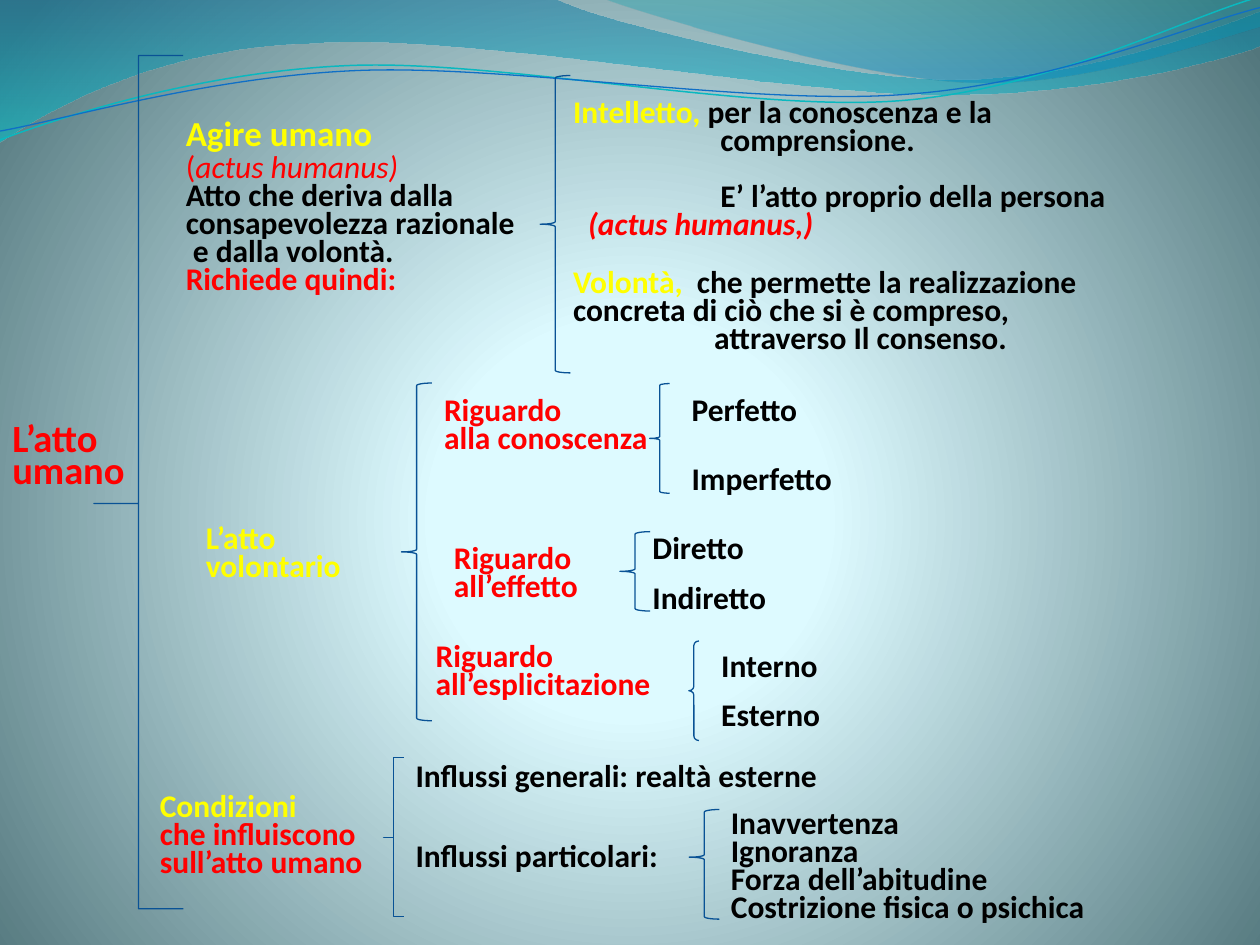
"""Build the slide on the human act as a tree of braces."""
from dataclasses import dataclass
from math import cos, radians, sin

from lxml.etree import SubElement
from pptx import Presentation
from pptx.dml.color import RGBColor
from pptx.enum.shapes import MSO_SHAPE
from pptx.enum.text import MSO_AUTO_SIZE
from pptx.oxml import parse_xml
from pptx.oxml.ns import nsdecls, qn
from pptx.util import Inches, Pt

COLS, ROWS = 100, 75


@dataclass(frozen=True)
class Theme:
    font: str = "Calibri"
    red: str = "FF0000"
    gold: str = "FFFF00"
    ink: str = "000000"
    brace: str = "095295"
    teal: str = "0AB8BF"
    blue: str = "0F6FC6"
    text: int = 18
    head: int = 20
    root: int = 22
    tight: int = 16
    thin: float = 0.75
    glow: tuple = ((0, "DEFBFF", 100), (25, "DDFAFF", 100), (100, "52767C", 100))
    wave: tuple = ((0, "0074A1", 45), (100, "00C6CF", 55))
    crest: tuple = ((0, "00A1A9", 30), (80, "008BBF", 45))


T = Theme()
TILT = 357.3
DOWN = '<a:lin ang="5400000" scaled="1"/>'
ROUND = ('<a:path path="circle"><a:fillToRect l="10000" t="110000" '
         'r="10000" b="100000"/></a:path>')

BRACES = [
    (7.45, 4.4, 7.1, 67.73, 0, 0.525), (42.87, 6, 2.4, 23.6, 0.083, 0.5),
    (31.87, 30.4, 2.4, 26.8, 0.083, 0.5), (51.56, 30.45, 1.6, 8.7, 0.083, 0.5),
    (49.2, 42.2, 2.4, 6.3, 0.083, 0.5), (54.67, 50.87, 0.8, 7.9, 0.44, 0.5),
    (30.45, 60.15, 1.6, 12.6, 0, 0.5), (54.7, 64.25, 2.4, 8.7, 0.083, 0.435),
]
WAVE = [(0, 0), [(44, -0.1)], [(47.6, 1.7), (66.4, 6.3), (75.8, 6.3)],
        [(85.3, 6.3), (95.8, 2.6), (100, 0.9)], [(100.1, 3.6)],
        [(98.3, 4.4), (87, 7.6), (74.6, 7.5)], [(62.2, 7.5), (38.2, 2.8), (25.7, 3.4)],
        [(12.9, 3.6), (4.6, 8.3), (-0.1, 11.3)], [(0, 0)]]
CREST = [(47.9, -0.1), [(50.9, 1.1), (68.2, 6.2), (76.9, 6.5)],
         [(85.6, 6.9), (96.1, 3.2), (100, 2.1)], [(100, 0)], [(47.9, -0.1)]]
UPPER = [(0, 11.1), [(4.8, 9.3), (15.8, 5.7), (27.7, 5.2)],
         [(39.5, 4.7), (59.3, 8.9), (71.3, 8)], [(83.3, 7.1), (93.8, 1.5), (99.8, -0.2)]]
LOWER = [(0, 10.4), [(4.7, 9.6), (16.4, 6.1), (28.3, 5.6)],
         [(40.3, 5.1), (59.7, 8.4), (71.7, 7.5)], [(83.6, 6.7), (94.1, 2.1), (100, 0.6)]]


def unit(n):
    """Turn grid cells into a length."""
    return Inches(n / 10)


def put(item, values):
    """Set attributes from a dict."""
    for name, value in values.items():
        setattr(item, name, value)


def shade(owner, fill, stops, way):
    """Give a fill gradient stops and a direction."""
    fill.gradient()
    old = owner.xpath(".//a:gradFill")[0]
    marks = "".join(f'<a:gs pos="{pos * 1000}"><a:srgbClr val="{color}">'
                    f'<a:alpha val="{alpha * 1000}"/></a:srgbClr></a:gs>'
                    for pos, color, alpha in stops)
    new = parse_xml(f'<a:gradFill {nsdecls("a")} rotWithShape="1">'
                    f'<a:gsLst>{marks}</a:gsLst>{way}</a:gradFill>')
    old.getparent().replace(old, new)


def stroke(shape, color, width):
    """Draw a shape as a plain outline."""
    shape.shadow.inherit = False
    shape.fill.background()
    shape.line.color.rgb = RGBColor.from_string(color)
    shape.line.width = Pt(width)


def turn(path, mid, angle):
    """Turn a path about a point."""
    a, (cx, cy) = radians(angle), mid

    def spin(dot):
        """Turn one point."""
        x, y = dot[0] - cx, dot[1] - cy
        return cx + x * cos(a) - y * sin(a), cy + x * sin(a) + y * cos(a)
    return [spin(path[0])] + [[spin(dot) for dot in piece] for piece in path[1:]]


def trace(shapes, path, close):
    """Build an outline from lines and cubic curves."""
    pen = shapes.build_freeform(*map(unit, path[0]))
    pen.add_line_segments([(unit(x), unit(y)) for piece in path[1:] for x, y in piece],
                          close=close)
    shape = pen.convert_to_shape()
    nodes = iter(shape.element.xpath(".//a:lnTo"))
    for piece in path[1:]:
        group = [next(nodes) for _ in piece]
        if len(group) == 3:
            curve = SubElement(group[0].getparent(), qn("a:cubicBezTo"))
            group[0].addprevious(curve)
            for node in group:
                curve.append(node[0])
                node.getparent().remove(node)
    return shape


def band(slide, path, stops):
    """Add a shaded wave."""
    shape = trace(slide.shapes, path, True)
    shape.shadow.inherit = False
    shape.line.fill.background()
    shade(shape.element, shape.fill, stops, DOWN)


def ripple(group, path, mid, color, width):
    """Add a tilted wave line."""
    shape = trace(group.shapes, turn(path, mid, 360 - TILT), False)
    shape.rotation = TILT
    stroke(shape, color, width)


def brace(slide, x, y, w, h, curl, tip):
    """Add a left brace."""
    shape = slide.shapes.add_shape(MSO_SHAPE.LEFT_BRACE, *map(unit, (x, y, w, h)))
    shape.adjustments[0], shape.adjustments[1] = curl, tip
    stroke(shape, T.brace, T.thin)


def line(*runs, lead=T.tight, left=0, first=0, gap=0):
    """Describe one paragraph."""
    return runs, lead, {"marL": left, "indent": first}, gap


def run(text, color=T.ink, size=T.text, bold=True, italic=False):
    """Describe one run of text."""
    return text, color, {"name": T.font, "size": Pt(size), "bold": bold, "italic": italic}


def stack(color, *texts, size=T.text, lead=T.tight):
    """Describe paragraphs of one colour."""
    return [line(run(text, color, size), lead=lead) for text in texts]


def note(slide, x, y, w, h, lines):
    """Add a text box."""
    frame = slide.shapes.add_textbox(*map(unit, (x, y, w, h))).text_frame
    put(frame, {"word_wrap": True, "auto_size": MSO_AUTO_SIZE.SHAPE_TO_FIT_TEXT})
    for n, (runs, lead, edges, gap) in enumerate(lines):
        para = frame.add_paragraph() if n else frame.paragraphs[0]
        put(para, {"line_spacing": Pt(lead) if lead else None, "space_before": Pt(gap)})
        for name, size in edges.items():
            para._p.get_or_add_pPr().set(name, str(unit(size)))
        for text, color, style in runs:
            if text.startswith("\n"):
                para.add_line_break()
            part = para.add_run()
            part.text = text.strip("\n")
            put(part.font, style)
            part.font.color.rgb = RGBColor.from_string(color)


def deed(slide):
    """Add the root and the branch on human action."""
    note(slide, 0, 33.55, 12.5, 6.1, stack(T.red, "L’atto", "umano", size=T.root, lead=18))
    note(slide, 13.76, 8.34, 29.9, 18.1, [
        line(run("Agire umano", T.gold, T.head), lead=None),
        line(run("(", T.red, bold=False),
             run("actus humanus)", T.red, bold=False, italic=True), lead=18),
        *stack(T.ink, "Atto che deriva dalla consapevolezza razionale", " e dalla volontà."),
        *stack(T.red, "Richiede quindi:")])
    note(slide, 44.5, 7.6, 50.4, 14.5, [
        line(run("Intelletto, ", T.gold), run("per la conoscenza e la")),
        line(run("comprensione."), left=11.7),
        line(run("E’ l’atto proprio della persona "),
             run("\n(actus humanus,)", T.red, italic=True),
             left=1.2, first=10.5, gap=T.tight)])
    note(slide, 44.5, 21.1, 58.6, 7.7, [
        line(run("Volontà, ", T.gold), run(" che permette la realizzazione "),
             run("\nconcreta di ciò che si è compreso,")),
        line(run("attraverso Il consenso."), left=11.2)])


def will(slide):
    """Add the branches on the voluntary act and its conditions."""
    note(slide, 15.36, 41.4, 17.3, 5.5, stack(T.gold, "L’atto", "volontario"))
    for x, y, w, h, text in [(34.26, 31.22, 19.7, 7.7, "alla conoscenza"),
                             (35.03, 43, 18.1, 5.5, "all’effetto"),
                             (33.6, 50.8, 22.7, 5.5, "all’esplicitazione")]:
        note(slide, x, y, w, h, stack(T.red, "Riguardo", text))
    for x, y, w, text in [(53.9, 30.5, 14.2, "Perfetto"), (53.9, 35.9, 17.3, "Imperfetto"),
                          (50.8, 41.4, 15, "Diretto"), (50.8, 45.4, 15.7, "Indiretto"),
                          (56.26, 50.8, 12.6, "Interno"), (56.26, 54.7, 15, "Esterno"),
                          (32, 59.5, 41.6, "Influssi generali: realtà esterne"),
                          (32, 65.84, 45.5, "Influssi particolari:")]:
        note(slide, x, y, w, 4, stack(T.ink, text, lead=None))
    note(slide, 11.7, 62.7, 28.8, 7.7, stack(T.gold, "Condizioni")
         + stack(T.red, "che influiscono", "sull’atto umano"))
    note(slide, 57.02, 64.06, 37.8, 10, stack(
        T.ink, "Inavvertenza", "Ignoranza", "Forza dell’abitudine",
        "Costrizione fisica o psichica"))


def main():
    """Build and save the deck."""
    deck = Presentation()
    put(deck, {"slide_width": unit(COLS), "slide_height": unit(ROWS)})
    slide = deck.slides.add_slide(deck.slide_layouts[6])
    shade(slide.element, slide.background.fill, T.glow, ROUND)
    band(slide, WAVE, T.wave)
    band(slide, CREST, T.crest)
    group = slide.shapes.add_group_shape()
    ripple(group, UPPER, (49.9, 5.75), T.teal, 0.85)
    ripple(group, LOWER, (49.95, 5.9), T.blue, T.thin)
    for spot in BRACES:
        brace(slide, *spot)
    deed(slide)
    will(slide)
    deck.save("out.pptx")


if __name__ == "__main__":
    main()
